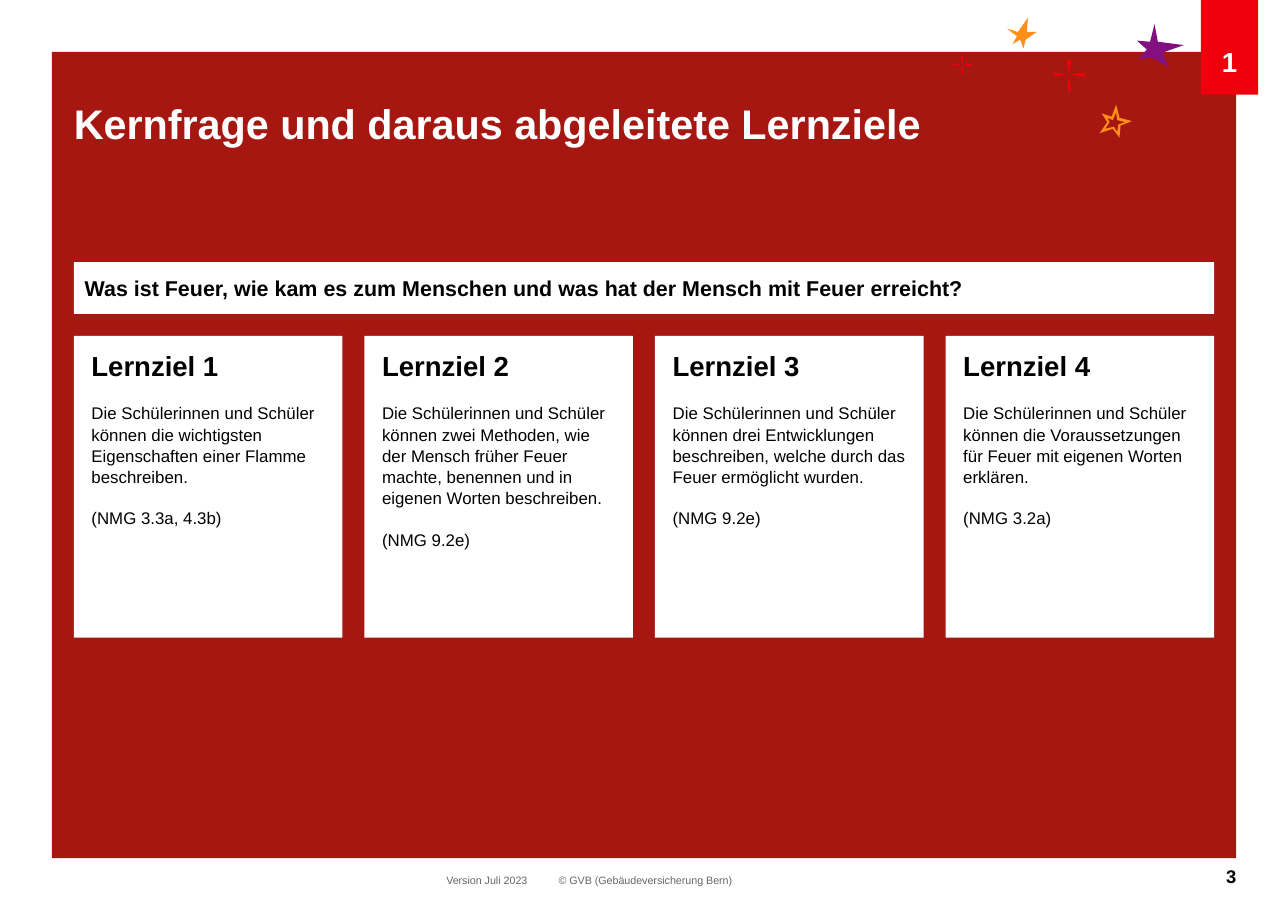
from collections import namedtuple
from dataclasses import dataclass

from pptx import Presentation
from pptx.dml.color import RGBColor
from pptx.enum.shapes import MSO_SHAPE
from pptx.enum.text import MSO_ANCHOR, PP_ALIGN
from pptx.util import Pt

Box = namedtuple("Box", "left top width height")


@dataclass(frozen=True)
class Theme:
    font: str = "Arial"
    panel: str = "A61711"
    red: str = "EE000C"
    purple: str = "831080"
    orange: str = "FF8F18"
    white: str = "FFFFFF"
    black: str = "000000"
    grey: str = "666666"
    title: float = 27
    heading: float = 18
    question: float = 14
    number: float = 12
    body: float = 11
    footer: float = 7


THEME = Theme()
PAGE_WIDTH, PAGE_HEIGHT = 841.68, 595.44
PANEL = Box(33.84, 33.84, 774, 527)
GAP = 14.4

GOALS = [
    ("Die Schülerinnen und Schüler können die wichtigsten Eigenschaften "
     "einer Flamme beschreiben.", "(NMG 3.3a, 4.3b)"),
    ("Die Schülerinnen und Schüler können zwei Methoden, wie der Mensch früher "
     "Feuer machte, benennen und in eigenen Worten beschreiben.", "(NMG 9.2e)"),
    ("Die Schülerinnen und Schüler können drei Entwicklungen beschreiben, "
     "welche durch das Feuer ermöglicht wurden.", "(NMG 9.2e)"),
    ("Die Schülerinnen und Schüler können die Voraussetzungen für Feuer mit "
     "eigenen Worten erklären.", "(NMG 3.2a)"),
]

# Outlines in tenths of a point, relative to their top left corner
PURPLE_STAR = [[(86, 115), (0, 108), (65, 166), (7, 230), (94, 216),
                (209, 281), (166, 187), (306, 137), (137, 115), (115, 0)]]
ORANGE_STAR = [[(36, 173), (86, 144), (108, 202), (122, 144), (194, 94),
                (130, 94), (137, 0), (72, 94), (0, 72), (65, 122)]]
HOLLOW_STAR = [[(130, 216), (86, 158), (0, 187), (50, 115), (14, 58),
                (79, 79), (108, 0), (130, 86), (212, 108), (137, 137)],
               [(94, 144), (115, 180), (122, 130), (166, 115), (115, 101),
                (108, 50), (86, 101), (50, 86), (65, 115), (36, 158)]]
SPARK = [[(101, 79), (86, 0), (115, 7), (108, 79)],
         [(108, 122), (115, 209), (94, 202), (101, 115)],
         [(122, 94), (202, 86), (209, 115), (122, 101)],
         [(79, 101), (7, 108), (0, 86), (79, 94)]]


def paint(shape, color):
    shape.shadow.inherit = False
    shape.fill.solid()
    shape.fill.fore_color.rgb = RGBColor.from_string(color)
    shape.line.fill.background()


def add_block(page, box, color):
    block = page.shapes.add_shape(MSO_SHAPE.RECTANGLE, *map(Pt, box))
    paint(block, color)
    return block


def add_label(page, box):
    return page.shapes.add_textbox(*map(Pt, box))


def set_frame(shape, left=0, top=0, right=0, bottom=0, anchor=MSO_ANCHOR.TOP):
    frame = shape.text_frame
    frame.word_wrap = True
    frame.vertical_anchor = anchor
    frame.margin_left, frame.margin_top = Pt(left), Pt(top)
    frame.margin_right, frame.margin_bottom = Pt(right), Pt(bottom)
    return frame


def write(frame, text, size, color=THEME.black, bold=False,
          align=PP_ALIGN.LEFT, before=0, spacing=1.0):
    """Fill the first paragraph if it is still empty, else append one."""
    para = frame.paragraphs[0]
    if para.runs:
        para = frame.add_paragraph()
    para.alignment = align
    para.line_spacing = spacing
    para.space_before = Pt(before)
    span = para.add_run()
    span.text = text
    span.font.name = THEME.font
    span.font.size = Pt(size)
    span.font.bold = bold
    span.font.color.rgb = RGBColor.from_string(color)


def add_outline(page, left, top, contours, color, scale=1.0):
    first, *others = contours
    builder = page.shapes.build_freeform(*first[0], scale=Pt(0.1) * scale)
    builder.add_line_segments(first[1:], close=True)
    for contour in others:
        builder.move_to(*contour[0])
        builder.add_line_segments(contour[1:], close=True)
    paint(builder.convert_to_shape(Pt(left), Pt(top)), color)


def add_stars(page, box):
    left, top = box.left, box.top
    add_outline(page, left + 120.2, top + 4.3, PURPLE_STAR, THEME.purple)
    add_outline(page, left + 65.5, top + 27.4, SPARK, THEME.red)
    add_outline(page, left + 35.3, top, ORANGE_STAR, THEME.orange)
    add_outline(page, left, top + 25.2, SPARK, THEME.red, scale=0.58)
    add_outline(page, left + 95.8, top + 56.9, HOLLOW_STAR, THEME.orange)


def add_chapter_tab(page, box, number):
    frame = set_frame(add_block(page, box, THEME.red), top=28.8, bottom=10.8,
                      anchor=MSO_ANCHOR.BOTTOM)
    write(frame, number, THEME.heading, THEME.white, bold=True,
          align=PP_ALIGN.CENTER)


def add_title(page, box, text):
    write(set_frame(add_label(page, box)), text, THEME.title, THEME.white,
          bold=True, spacing=1.1)


def add_question(page, box, text):
    frame = set_frame(add_block(page, box, THEME.white), 7.2, 3.6, 7.2, 3.6,
                      MSO_ANCHOR.MIDDLE)
    write(frame, text, THEME.question, bold=True)


def add_goal_card(page, box, heading, goal, reference):
    frame = set_frame(add_block(page, box, THEME.white), 11.5, 7.2, 11.5, 7.2)
    write(frame, heading, THEME.heading, bold=True, spacing=1.05)
    for text in (goal, reference):
        write(frame, text, THEME.body, before=13.3, spacing=1.05)


def add_goals(page, box):
    width = (box.width - GAP * (len(GOALS) - 1)) / len(GOALS)
    for index, (goal, reference) in enumerate(GOALS):
        card = Box(box.left + index * (width + GAP), box.top, width, box.height)
        add_goal_card(page, card, f"Lernziel {index + 1}", goal, reference)


def add_footer(page, box):
    labels = [(257.8, 61.2, "Version Juli 2023"),
              (331.2, 120, "© GVB (Gebäudeversicherung Bern)")]
    for offset, width, text in labels:
        label = add_label(page, Box(box.left + offset, box.top + 5.8, width, 9))
        write(set_frame(label), text, THEME.footer, THEME.grey)
    number = add_label(page, Box(box.left + box.width - 51, box.top, 51, 12.2))
    write(set_frame(number), "3", THEME.number, bold=True,
          align=PP_ALIGN.RIGHT)


def build_page(deck):
    page = deck.slides.add_slide(deck.slide_layouts[6])
    left, width = PANEL.left + GAP, PANEL.width - 2 * GAP
    add_block(page, PANEL, THEME.panel)
    add_stars(page, Box(622.8, 11.5, 151, 79))
    add_chapter_tab(page, Box(784.8, 0, 37.4, 61.9), "1")
    add_title(page, Box(left, 61.2, 581, 41.8),
              "Kernfrage und daraus abgeleitete Lernziele")
    add_question(page, Box(left, 171.4, width, 33.8),
                 "Was ist Feuer, wie kam es zum Menschen und was hat der "
                 "Mensch mit Feuer erreicht?")
    add_goals(page, Box(left, 219.6, width, 197.3))
    add_footer(page, Box(PANEL.left, 565.2, PANEL.width, 15))


def main():
    deck = Presentation()
    deck.slide_width, deck.slide_height = Pt(PAGE_WIDTH), Pt(PAGE_HEIGHT)
    build_page(deck)
    deck.save("out.pptx")


if __name__ == "__main__":
    main()
